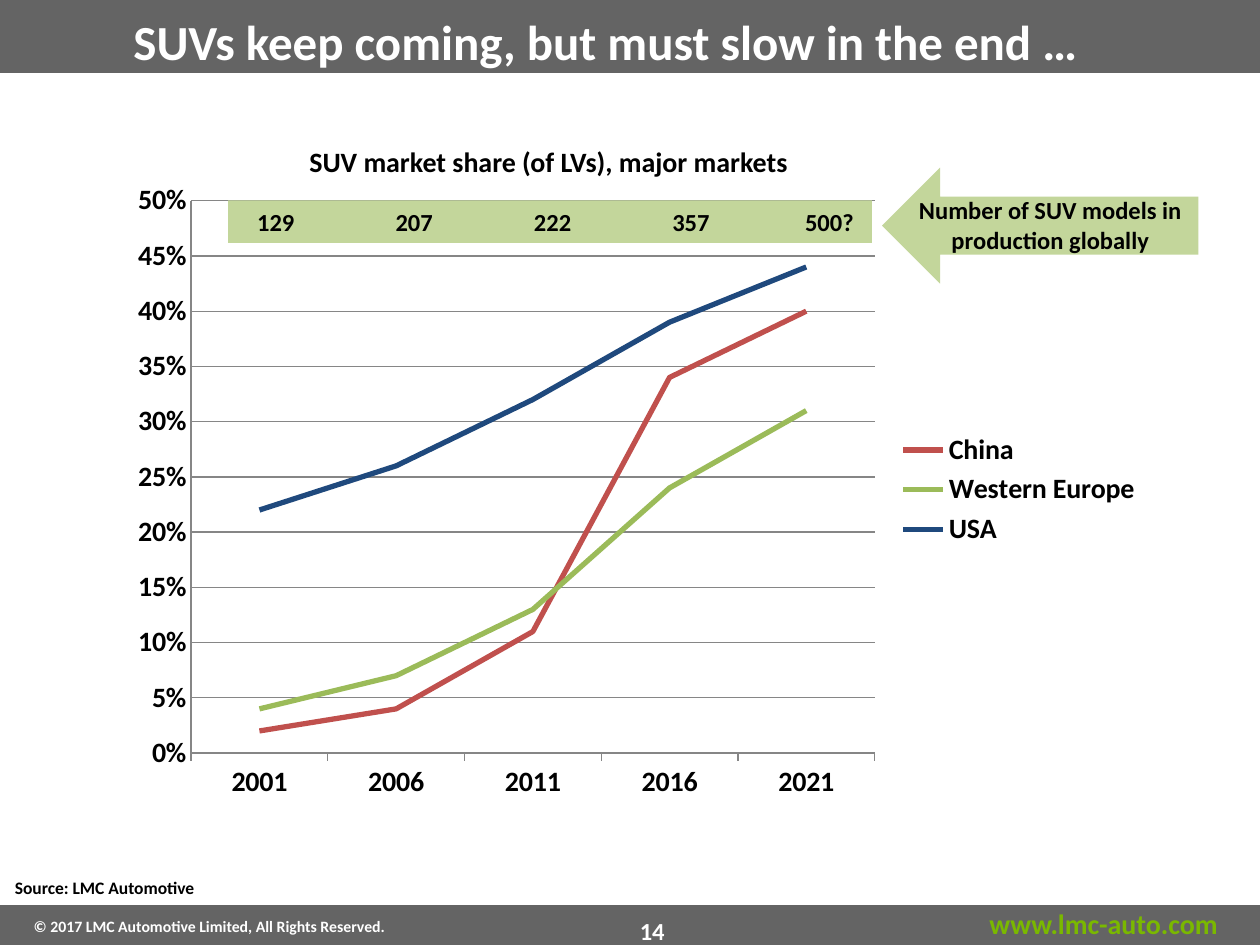
from lxml import etree
from pptx import Presentation
from pptx.chart.data import CategoryChartData
from pptx.dml.color import RGBColor
from pptx.enum.chart import XL_CHART_TYPE, XL_LEGEND_POSITION, XL_MARKER_STYLE, XL_TICK_MARK
from pptx.enum.shapes import MSO_SHAPE
from pptx.enum.text import MSO_ANCHOR, PP_ALIGN
from pptx.oxml import parse_xml
from pptx.oxml.ns import nsdecls, qn
from pptx.util import Cm, Pt

RECT, ARROW = MSO_SHAPE.RECTANGLE, MSO_SHAPE.RIGHT_ARROW
LEFT, CENTER = PP_ALIGN.LEFT, PP_ALIGN.CENTER
MIDDLE = MSO_ANCHOR.MIDDLE
NO_TICK, OUTSIDE = XL_TICK_MARK.NONE, XL_TICK_MARK.OUTSIDE
GREY, GREEN, WHITE, BLACK = "646464", "C3D69B", "FFFFFF", "000000"
LIME, GRID = "7AB800", "868686"


def rgb(value):
    return RGBColor.from_string(value)


def write(tf, text, size=14, color=BLACK, align=LEFT, tabs=()):
    """Fill a text frame with one bold paragraph; tabs are centred stops in cm."""
    tf.word_wrap = True
    p = tf.paragraphs[0]
    if tabs:
        tab_list = etree.SubElement(p._p.get_or_add_pPr(), qn("a:tabLst"))
        for pos in tabs:
            etree.SubElement(tab_list, qn("a:tab"), pos=str(Cm(pos)), algn="ctr")
    p.alignment = align
    r = p.add_run()
    r.text = text
    r.font.name, r.font.size, r.font.bold = "Calibri", Pt(size), True
    r.font.color.rgb = rgb(color)


class SlideBuilder:
    def __init__(self, slide):
        self.s = slide

    def shape(self, kind, x, y, w, h, fill, line=None):
        sp = self.s.shapes.add_shape(kind, Cm(x), Cm(y), Cm(w), Cm(h))
        sp.shadow.inherit = False
        sp.fill.solid()
        sp.fill.fore_color.rgb = rgb(fill)
        if line:
            sp.line.color.rgb = rgb(line)
            sp.line.width = Pt(2)
        else:
            sp.line.fill.background()
        return sp

    def text(self, x, y, w, h, text, **style):
        sp = self.s.shapes.add_textbox(Cm(x), Cm(y), Cm(w), Cm(h))
        write(sp.text_frame, text, **style)

    def line_chart(self, x, y, w, h, cats, series, plot):
        """series: (name, values, colour); plot: inner area as chart fractions."""
        data = CategoryChartData(number_format="0%")
        data.categories = cats
        for name, values, _ in series:
            data.add_series(name, values)
        chart = self.s.shapes.add_chart(
            XL_CHART_TYPE.LINE, Cm(x), Cm(y), Cm(w), Cm(h), data).chart
        chart.has_title = False
        chart.font.name, chart.font.size, chart.font.bold = "Calibri", Pt(16), True
        chart.font.color.rgb = rgb(BLACK)
        chart.has_legend = True
        chart.legend.position = XL_LEGEND_POSITION.RIGHT
        chart.legend.include_in_layout = False

        for ser, (_, _, color) in zip(chart.plots[0].series, series):
            ser.smooth = False
            ser.marker.style = XL_MARKER_STYLE.NONE
            ser.format.line.color.rgb = rgb(color)
            ser.format.line.width = Pt(3)

        val, cat = chart.value_axis, chart.category_axis
        val.minimum_scale, val.maximum_scale, val.major_unit = 0, 0.5, 0.05
        val.major_tick_mark, cat.major_tick_mark = NO_TICK, OUTSIDE
        val.tick_labels.number_format = "0%"
        val.tick_labels.number_format_is_linked = False
        val.has_major_gridlines = True
        for part in (val, cat, val.major_gridlines):
            part.format.line.color.rgb = rgb(GRID)
            part.format.line.width = Pt(0.75)

        # Fixed plot area
        modes = '<c:layoutTarget val="inner"/><c:xMode val="edge"/><c:yMode val="edge"/>'
        sizes = "".join(f'<c:{k} val="{v}"/>' for k, v in zip("xywh", plot))
        layout = parse_xml(f'<c:layout {nsdecls("c")}><c:manualLayout>{modes}{sizes}'
                           "</c:manualLayout></c:layout>")
        area = chart._chartSpace.chart.plotArea
        for old in area.findall(qn("c:layout")):
            area.remove(old)
        area.insert(0, layout)


def main():
    prs = Presentation()
    prs.slide_width, prs.slide_height = Cm(25.4), Cm(19.05)
    b = SlideBuilder(prs.slides.add_slide(prs.slide_layouts[6]))

    # Header and footer
    b.shape(RECT, 0, 0, 25.4, 1.47, GREY)
    b.shape(RECT, 0, 18.29, 25.4, 0.81, GREY, line=GREY)
    b.text(19.35, 18.16, 5.8, 0.94, "www.lmc-auto.com", size=16, color=LIME, align=CENTER)
    b.text(0.43, 18.36, 9.12, 0.64, "© 2017 LMC Automotive Limited, All Rights Reserved.",
           size=9, color=WHITE)
    b.text(8.59, 18.34, 9.12, 0.84, "14", color=WHITE, align=CENTER)

    # Title
    b.text(2.44, 0.1, 22.38, 1.45, "SUVs keep coming, but must slow in the end …",
           size=28, color=WHITE)

    # Arrow pointing at the model counts
    b.shape(ARROW, 17.78, 3.38, 6.38, 2.34, GREEN).rotation = 180

    # Market share chart
    b.line_chart(2.39, 3.4, 20.88, 12.95, ["2001", "2006", "2011", "2016", "2021"], [
        ("China", (0.02, 0.04, 0.11, 0.34, 0.4), "C0504D"),
        ("Western Europe", (0.04, 0.07, 0.13, 0.24, 0.31), "9BBB59"),
        ("USA", (0.22, 0.26, 0.32, 0.39, 0.44), "1F497D"),
    ], plot=(0.07, 0.05, 0.66, 0.86))
    b.text(0.81, 2.79, 20.5, 0.94, "SUV market share (of LVs), major markets",
           size=16, align=CENTER)
    b.text(0.05, 17.55, 9.07, 0.69, "Source: LMC Automotive", size=10)

    # Model counts, one centred tab per year
    counts = ["129", "207", "222", "357", "500?"]
    tf = b.shape(RECT, 4.6, 4.04, 12.98, 0.86, GREEN).text_frame
    tf.vertical_anchor = MIDDLE
    write(tf, "".join("\t" + n for n in counts),
          tabs=[0.71 + 2.79 * i for i in range(len(counts))])
    b.text(18.19, 3.81, 5.97, 1.45, "Number of SUV models in production globally",
           align=CENTER)

    prs.save("out.pptx")


if __name__ == "__main__":
    main()
